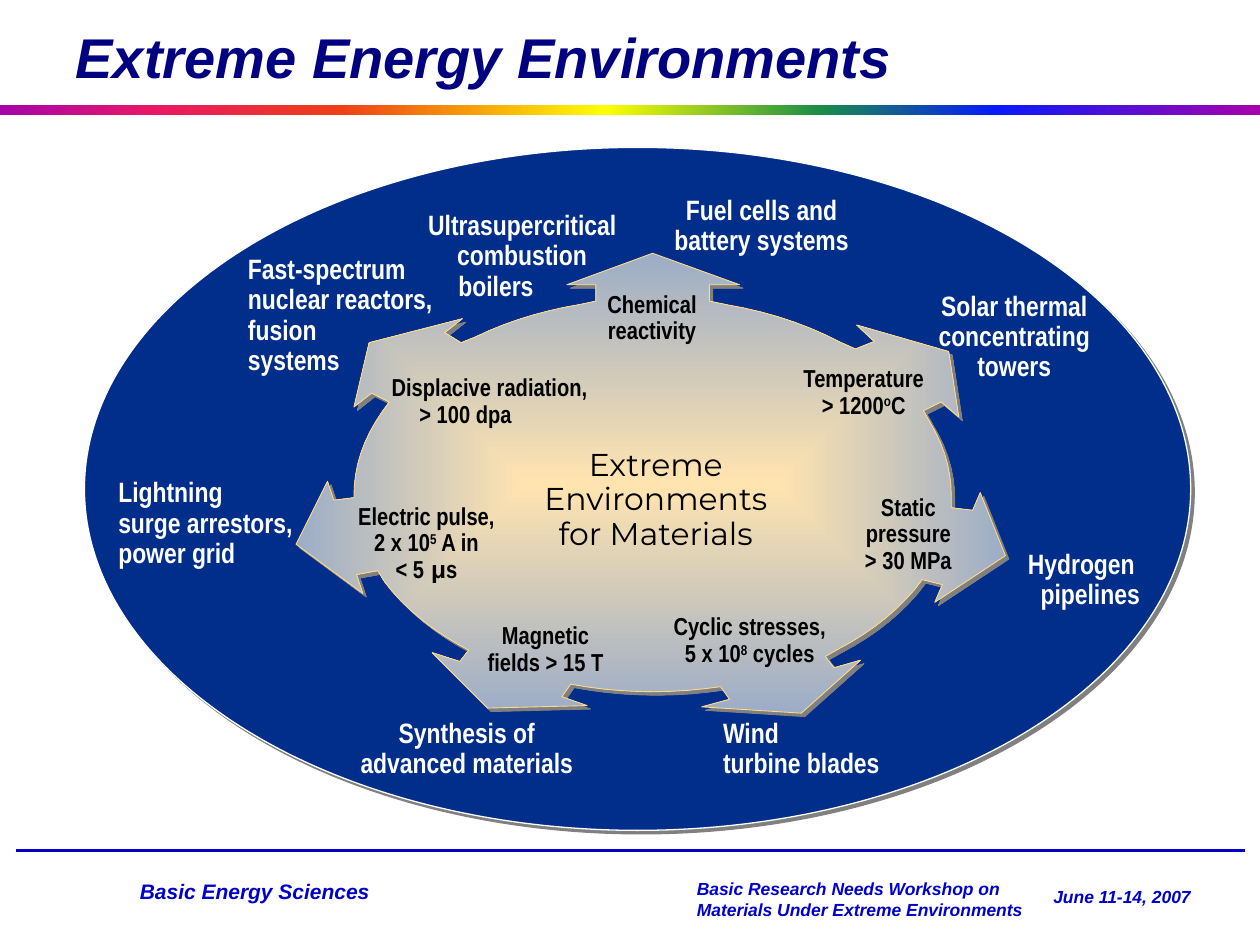
from dataclasses import dataclass
from math import atan2, cos, sin, tau

from pptx import Presentation
from pptx.dml.color import RGBColor
from pptx.enum.shapes import MSO_CONNECTOR, MSO_SHAPE
from pptx.enum.text import MSO_ANCHOR, MSO_AUTO_SIZE, PP_ALIGN
from pptx.oxml import parse_xml
from pptx.oxml.ns import nsdecls, qn
from pptx.util import Pt

LEFT, CENTER = PP_ALIGN.LEFT, PP_ALIGN.CENTER
TOP = MSO_ANCHOR.TOP
GROW, FIXED = MSO_AUTO_SIZE.SHAPE_TO_FIT_TEXT, MSO_AUTO_SIZE.NONE
OVAL, RECT = MSO_SHAPE.OVAL, MSO_SHAPE.RECTANGLE
STRAIGHT = MSO_CONNECTOR.STRAIGHT
PX = 9144  # 100 px to the inch
TITLE_ONLY = 5


@dataclass(frozen=True)
class Theme:
    title: str = "000080"
    footer: str = "0000CC"
    oval: str = "002E8A"
    light: str = "FFFFFF"
    dark: str = "000000"
    burst_edge: str = "FFD889"
    shadow: str = "808080"
    burst: tuple = ((0, "FFE4AF"), (100, "9CADC7"))
    rainbow: tuple = ((0, "A603AB"), (12, "E81766"), (27, "EE3F17"), (48, "FFFF00"),
                      (65, "1A8D48"), (79, "0819FB"), (100, "A603AB"))
    font: str = "Arial"
    narrow: str = "Arial Narrow"
    core: str = "Montserrat"
    title_size: int = 32
    core_size: int = 18
    use_size: int = 16
    stress_size: int = 14
    footer_size: int = 12
    event_size: int = 10


T = Theme()

# Each arrow: base, notch, wing, tip, wing, notch, base, from the burst's centre.
ARROWS = [
    [(214, 67), (230, 71), (224, 85), (280, 48), (260, -2), (254, 12), (237, 10)],
    [(215, -67), (229, -74), (243, -62), (235, -114), (162, -135), (176, -122), (161, -116)],
    [(45, -154), (45, -167), (69, -167), (0, -192), (-68, -167), (-45, -167), (-45, -154)],
    [(-152, -121), (-165, -129), (-151, -140), (-225, -121), (-237, -70), (-223, -81), (-209, -74)],
    [(-237, 2), (-253, 4), (-258, -11), (-283, 39), (-230, 78), (-235, 63), (-218, 60)],
    [(-146, 123), (-153, 132), (-175, 125), (-131, 169), (-52, 167), (-72, 160), (-65, 150)],
    [(54, 152), (61, 162), (39, 168), (118, 173), (165, 131), (144, 137), (137, 128)],
]
BURST_CENTER, BURST_RADII = (451, 276), (237, 156)

# Box, alignment, paragraphs and, where lines are staggered, their indents.
USES = [
    ((643, 110, 190, 82), CENTER, ["Solar thermal concentrating towers"], ()),
    ((739, 315, 119, 58), LEFT, ["Hydrogen", "pipelines"], (0, 10)),
    ((120, 81, 183, 107), LEFT, ["Fast-spectrum nuclear reactors, fusion\nsystems"], ()),
    ((490, 449, 168, 58), LEFT, ["Wind", "turbine blades"], (7, 7)),
    ((256, 46, 183, 82), LEFT, ["Ultrasupercritical", "combustion", "boilers"], (7, 30, 31)),
    ((446, 34, 183, 58), CENTER, ["Fuel cells and battery systems"], ()),
    ((201, 449, 205, 58), CENTER, ["Synthesis of advanced materials"], ()),
    ((17, 258, 198, 82), LEFT, ["Lightning\nsurge arrestors,", "power grid"], ()),
]
STRESSES = [
    ((234, 176, 190, 52), LEFT, ["Displacive radiation,", "> 100 dpa"], (0, 22)),
    ((285, 373, 162, 52), CENTER, ["Magnetic\nfields > 15 T"], ()),
    ((446, 366, 164, 52), CENTER,
     ["Cyclic stresses,", [("5 x 10", ""), ("8", "sup"), (" cycles", "")]], ()),
    ((185, 278, 173, 73), CENTER,
     ["Electric pulse,", [("2 x 10", ""), ("5", "sup"), (" A in", "")],
      [("< 5", ""), (" μ", "greek"), ("s", "")]], ()),
    ((526, 169, 185, 52), CENTER,
     ["Temperature", [("> 1200", ""), ("o", "sup"), ("C", "")]], ()),
    ((599, 271, 110, 73), CENTER, ["Static", "pressure\n> 30 MPa"], ()),
    ((358, 110, 185, 52), CENTER, ["Chemical\nreactivity"], ()),
]
CORE = ((322, 235, 263, 91), CENTER, ["Extreme Environments", "for Materials"], ())


def px(*values):
    return [round(v * PX) for v in values]


def within(box, part):
    """Shift a part, given relative to its region, to slide coordinates."""
    return (box[0] + part[0], box[1] + part[1], *part[2:])


def rgb(value):
    return RGBColor.from_string(value)


def style_run(r, font, size, color, bold=True, italic=False):
    r.font.name, r.font.size = font, Pt(size)
    r.font.color.rgb = rgb(color)
    r.font.bold, r.font.italic = bold, italic


def fill_gradient(sp, stops, direction):
    stop_xml = "".join(f'<a:gs pos="{pos * 1000}"><a:srgbClr val="{color}"/></a:gs>'
                       for pos, color in stops)
    sp.fill.background()
    spPr = sp._element.spPr
    spPr.replace(spPr.find(qn("a:noFill")), parse_xml(
        f'<a:gradFill {nsdecls("a")} rotWithShape="1"><a:gsLst>{stop_xml}</a:gsLst>'
        f'{direction}</a:gradFill>'))


def outline_with_shadow(sp, color, width):
    sp.line.color.rgb, sp.line.width = rgb(color), Pt(width)
    sp.shadow.inherit = False
    sp._element.spPr.find(qn("a:effectLst")).append(parse_xml(
        f'<a:outerShdw {nsdecls("a")} dist="35560" dir="2700000" algn="ctr" '
        f'rotWithShape="0"><a:srgbClr val="{T.shadow}"/></a:outerShdw>'))


def add_text(s, box, paragraphs, font, size, color, align=LEFT, indents=(),
             spacing=None, inset=10, bold=True, italic=False):
    sp = s.shapes.add_textbox(*px(*box))
    tf = sp.text_frame
    tf.word_wrap, tf.auto_size, tf.vertical_anchor = True, GROW, TOP
    tf.margin_left, tf.margin_right, tf.margin_top, tf.margin_bottom = px(inset, inset, 5, 5)
    for i, runs in enumerate(paragraphs):
        p = tf.add_paragraph() if i else tf.paragraphs[0]
        p.alignment, p.line_spacing = align, spacing
        if indents:
            p._p.get_or_add_pPr().set("marL", str(indents[i] * PX))
        for text, kind in [(runs, "")] if isinstance(runs, str) else runs:
            for n, line in enumerate(text.split("\n")):
                if n:
                    p.add_line_break()
                r = p.add_run()
                r.text = line
                style_run(r, T.font if kind == "greek" else font, size, color, bold, italic)
                if kind == "sup":
                    r.font._element.set("baseline", "30000")


def add_header(s, box):
    bar = s.shapes.add_shape(RECT, *px(*within(box, (0, 83, 1000, 8))))
    fill_gradient(bar, T.rainbow, '<a:lin ang="0" scaled="1"/>')
    bar.line.fill.background()
    bar.shadow.inherit = False

    title = s.shapes.title
    title.left, title.top, title.width, title.height = px(*within(box, (50, 8, 850, 63)))
    tf = title.text_frame
    tf.word_wrap, tf.auto_size, tf.vertical_anchor = True, FIXED, TOP
    tf.margin_left, tf.margin_right, tf.margin_top, tf.margin_bottom = px(10, 10, 10, 0)
    p = tf.paragraphs[0]
    p.alignment = LEFT
    r = p.add_run()
    r.text = "Extreme Energy Environments"
    style_run(r, T.font, T.title_size, T.title, italic=True)


def add_footer(s, box):
    x, y, width = box[:3]
    rule = s.shapes.add_connector(STRAIGHT, *px(x, y, x + width, y))
    rule.line.color.rgb, rule.line.width = rgb(T.footer), Pt(2.25)
    rule._element.spPr.append(parse_xml(f'<a:effectLst {nsdecls("a")}/>'))
    for part, text, size in [
        ((87, 17, 281, 30), "Basic Energy Sciences", T.footer_size),
        ((529, 17, 281, 44),
         "Basic Research Needs Workshop on Materials Under Extreme Environments", T.event_size),
        ((812, 23, 133, 27), "June 11-14, 2007", T.event_size),
    ]:
        add_text(s, within(box, part), [text], T.font, size, T.footer, inset=11, italic=True)


def arc(start, end, steps=9):
    """Points strictly between two bases, anticlockwise along the burst's ellipse."""
    rx, ry = BURST_RADII
    a, b = (atan2(y / ry, x / rx) for x, y in (start, end))
    sweep = (a - b) % tau
    angles = [a - sweep * i / steps for i in range(1, steps)]
    return [(rx * cos(t), ry * sin(t)) for t in angles]


def add_burst(s, center):
    outline = []
    for arrow, following in zip(ARROWS, ARROWS[1:] + ARROWS[:1]):
        outline += arrow + arc(arrow[-1], following[0])
    points = [px(*within(center, point)) for point in outline]
    builder = s.shapes.build_freeform(*points[0])
    builder.add_line_segments(points[1:], close=True)
    burst = builder.convert_to_shape()
    fill_gradient(burst, T.burst, '<a:path path="rect"><a:fillToRect l="50000" t="50000" '
                                  'r="50000" b="50000"/></a:path>')
    outline_with_shadow(burst, T.burst_edge, 0.5)


def add_diagram(s, box):
    oval = s.shapes.add_shape(OVAL, *px(*box))
    oval.fill.solid()
    oval.fill.fore_color.rgb = rgb(T.oval)
    outline_with_shadow(oval, T.light, 0.75)
    add_burst(s, within(box, BURST_CENTER))
    for labels, font, size, color, bold in [
        (USES, T.narrow, T.use_size, T.light, True),
        (STRESSES, T.narrow, T.stress_size, T.dark, True),
        ([CORE], T.core, T.core_size, T.dark, False),
    ]:
        for part, align, paragraphs, indents in labels:
            add_text(s, within(box, part), paragraphs, font, size, color, align,
                     indents, spacing=0.9, bold=bold)


def main():
    prs = Presentation()
    prs.slide_width, prs.slide_height = px(1000, 750)
    s = prs.slides.add_slide(prs.slide_layouts[TITLE_ONLY])
    add_header(s, (0, 0, 1000, 91))
    add_footer(s, (13, 675, 975, 75))
    add_diagram(s, (67, 117, 878, 542))
    prs.save("out.pptx")


if __name__ == "__main__":
    main()
